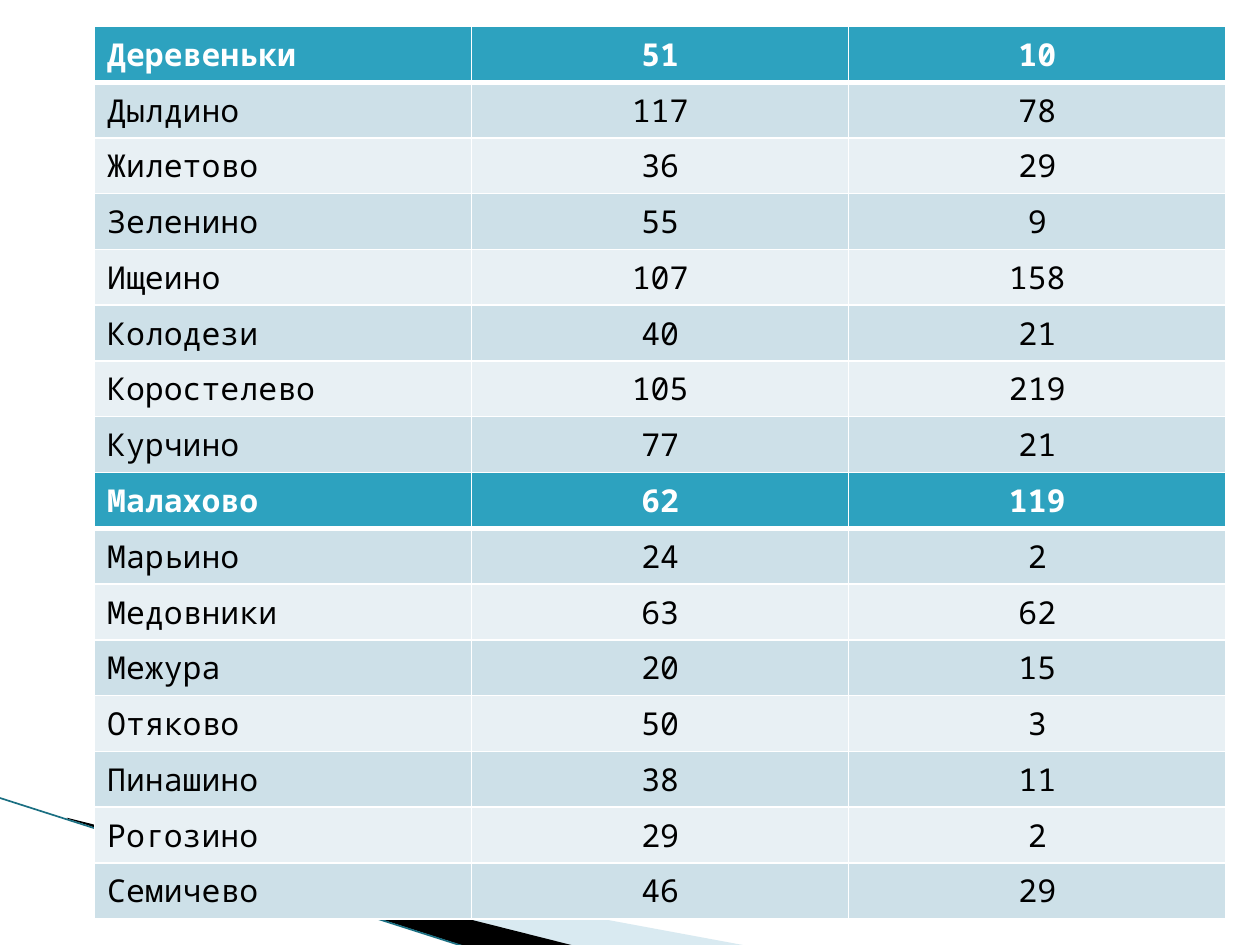
from dataclasses import dataclass

from lxml import etree
from pptx import Presentation
from pptx.dml.color import RGBColor
from pptx.enum.shapes import MSO_CONNECTOR
from pptx.enum.text import MSO_ANCHOR, PP_ALIGN
from pptx.oxml.ns import qn
from pptx.util import Pt

STRAIGHT = MSO_CONNECTOR.STRAIGHT
LEFT, CENTER = PP_ALIGN.LEFT, PP_ALIGN.CENTER
TOP = MSO_ANCHOR.TOP
BLANK_LAYOUT = 6


@dataclass(frozen=True)
class Theme:
    """Colours, font and sizes used on the slide."""
    font: str = "Noto Sans Mono"
    text_size: float = 18
    header_text: str = "FFFFFF"
    body_text: str = "000000"
    header_fill: str = "2DA2BF"
    bands: tuple = ("CDE0E8", "E8F0F4")
    border: str = "FFFFFF"
    thin_border: float = 1
    header_border: float = 3
    pale_wedge: str = "A0CBDC"
    dark_wedge: str = "000000"
    edge: str = "1A6F82"
    edge_width: float = 0.95


THEME = Theme()

FIRST_VILLAGES = [
    ("Деревеньки", "51", "10"),
    ("Дылдино", "117", "78"),
    ("Жилетово", "36", "29"),
    ("Зеленино", "55", "9"),
    ("Ищеино", "107", "158"),
    ("Колодези", "40", "21"),
    ("Коростелево", "105", "219"),
    ("Курчино", "77", "21"),
]
SECOND_VILLAGES = [
    ("Малахово", "62", "119"),
    ("Марьино", "24", "2"),
    ("Медовники", "63", "62"),
    ("Межура", "20", "15"),
    ("Отяково", "50", "3"),
    ("Пинашино", "38", "11"),
    ("Рогозино", "29", "2"),
    ("Семичево", "46", "29"),
]


def add_wedge(slide, left, top, points, color, opacity=100):
    """Draw a filled outline whose points are relative to left and top."""
    corners = [(Pt(left + x), Pt(top + y)) for x, y in points]
    builder = slide.shapes.build_freeform(*corners[0], scale=1.0)
    builder.add_line_segments(corners[1:], close=True)
    shape = builder.convert_to_shape()
    shape.shadow.inherit = False
    shape.line.fill.background()
    shape.fill.solid()
    shape.fill.fore_color.rgb = RGBColor.from_string(color)
    if opacity < 100:
        color_element = shape.fill._xPr.find(qn("a:solidFill"))[0]
        etree.SubElement(color_element, qn("a:alpha"), val=str(opacity * 1000))


def add_corner_decoration(slide, left, top):
    """Draw the two wedges and the edge line in the lower left corner."""
    add_wedge(slide, left + 39.6, top + 12.2,
              [(0, 0.7), (388.8, 72.7), (288.7, 72.7), (0, 0)],
              THEME.pale_wedge, opacity=40)
    add_wedge(slide, left + 38.2, top + 11.5,
              [(0, 0), (290.9, 73.4), (229.7, 74.1), (0.7, 0.7)],
              THEME.dark_wedge)
    edge = slide.shapes.add_connector(
        STRAIGHT, Pt(left - 0.7), Pt(top), Pt(left + 267.1), Pt(top + 85.7))
    edge.line.color.rgb = RGBColor.from_string(THEME.edge)
    edge.line.width = Pt(THEME.edge_width)
    etree.SubElement(edge._element.spPr, qn("a:effectLst"))


def set_borders(cell, top_width, bottom_width):
    """Give a cell solid borders on all four sides."""
    properties = cell._tc.get_or_add_tcPr()
    widths = {"lnL": THEME.thin_border, "lnR": THEME.thin_border,
              "lnT": top_width, "lnB": bottom_width}
    for position, (side, width) in enumerate(widths.items()):
        line = etree.Element(qn(f"a:{side}"), w=str(Pt(width)))
        fill = etree.SubElement(line, qn("a:solidFill"))
        etree.SubElement(fill, qn("a:srgbClr"), val=THEME.border)
        properties.insert(position, line)


def format_cell(cell, text, row, column):
    """Write one cell and style it by its place in the table."""
    is_header = row == 0
    fill = THEME.header_fill if is_header else THEME.bands[(row - 1) % 2]
    color = THEME.header_text if is_header else THEME.body_text
    cell.text = text
    cell.vertical_anchor = TOP
    cell.fill.solid()
    cell.fill.fore_color.rgb = RGBColor.from_string(fill)
    set_borders(cell,
                THEME.header_border if row == 1 else THEME.thin_border,
                THEME.header_border if is_header else THEME.thin_border)
    paragraph = cell.text_frame.paragraphs[0]
    paragraph.alignment = LEFT if column == 0 else CENTER
    paragraph.font.name = THEME.font
    paragraph.font.size = Pt(THEME.text_size)
    paragraph.font.bold = is_header
    paragraph.font.color.rgb = RGBColor.from_string(color)


def add_village_table(slide, villages, left, top, width, height):
    """Fill the box with a table of villages in equal rows and columns."""
    row_count, column_count = len(villages), len(villages[0])
    table = slide.shapes.add_table(
        row_count, column_count, Pt(left), Pt(top), Pt(width), Pt(height)).table
    for column in table.columns:
        column.width = Pt(width / column_count)
    for row in table.rows:
        row.height = Pt(height / row_count)
    for row, values in enumerate(villages):
        for column, text in enumerate(values):
            format_cell(table.cell(row, column), text, row, column)


def main():
    """Build the slide and save it."""
    presentation = Presentation()
    presentation.slide_width, presentation.slide_height = Pt(720), Pt(540)
    slide = presentation.slides.add_slide(
        presentation.slide_layouts[BLANK_LAYOUT])
    add_corner_decoration(slide, left=0, top=455.8)
    left, top, width, height = 54, 15.1, 646.5, 255
    for index, villages in enumerate((FIRST_VILLAGES, SECOND_VILLAGES)):
        add_village_table(slide, villages, left, top + index * height,
                          width, height)
    presentation.save("out.pptx")


if __name__ == "__main__":
    main()
